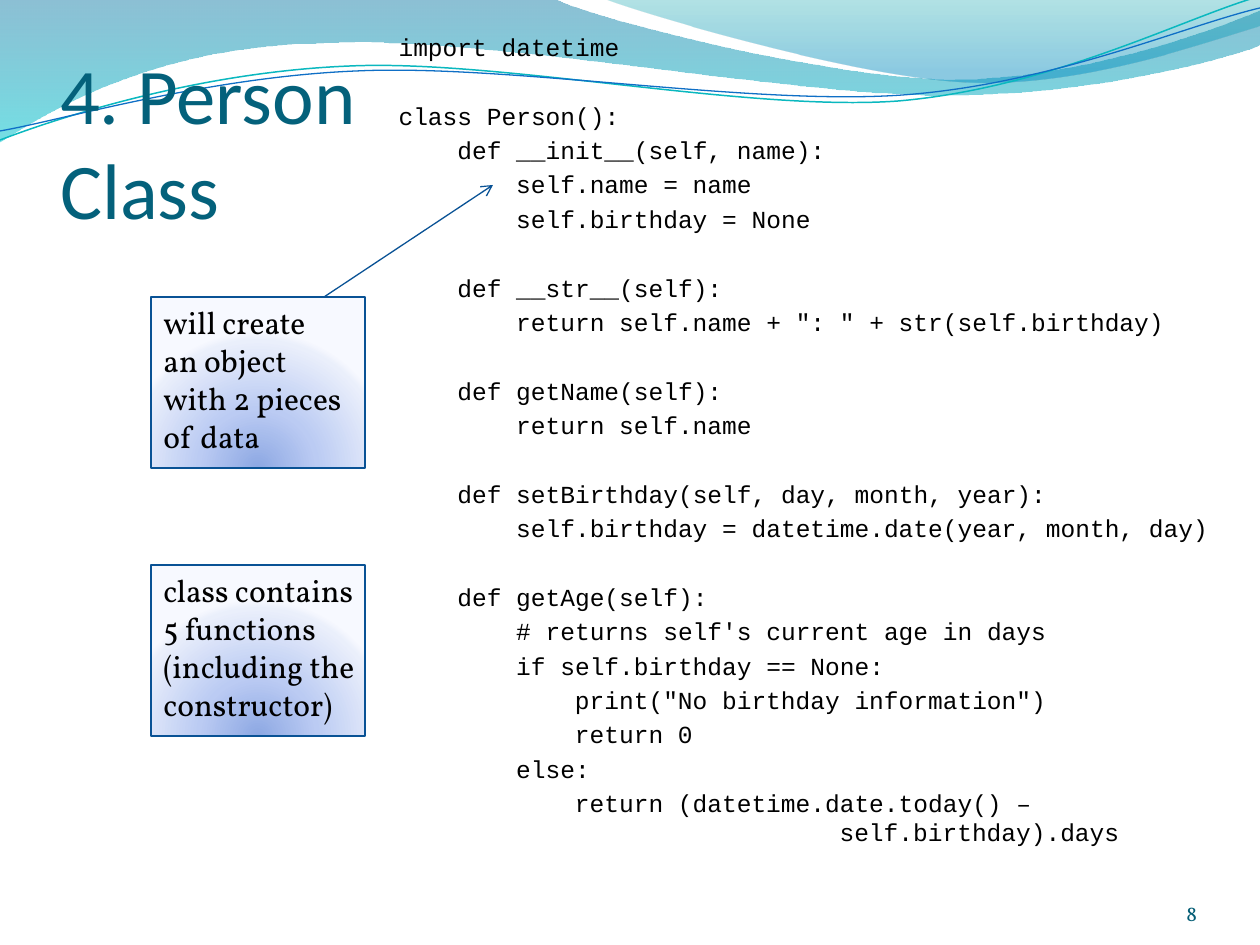
from lxml import etree
from pptx import Presentation
from pptx.dml.color import RGBColor
from pptx.enum.shapes import MSO_CONNECTOR, MSO_SHAPE
from pptx.enum.text import MSO_ANCHOR, MSO_AUTO_SIZE, PP_ALIGN
from pptx.oxml import parse_xml
from pptx.oxml.ns import nsdecls, qn
from pptx.util import Pt

RECTANGLE, STRAIGHT = MSO_SHAPE.RECTANGLE, MSO_CONNECTOR.STRAIGHT
BOTTOM, TOP = MSO_ANCHOR.BOTTOM, MSO_ANCHOR.TOP
LEFT, RIGHT = PP_ALIGN.LEFT, PP_ALIGN.RIGHT
NO_AUTOFIT = MSO_AUTO_SIZE.NONE

EMU_PER_PX = 914400 / 126
SLIDE_WIDTH, SLIDE_HEIGHT = 1260, 945

BLACK = RGBColor(0x00, 0x00, 0x00)
TITLE_TEAL = RGBColor(0x04, 0x61, 0x7B)
NUMBER_TEAL = RGBColor(0x04, 0x5D, 0x75)
OUTLINE_BLUE = RGBColor(0x09, 0x52, 0x95)
WAVE_TEAL = RGBColor(0x0A, 0xB8, 0xBF)
WAVE_BLUE = RGBColor(0x0F, 0x6F, 0xC6)

# Gradient stops: position %, colour, opacity %
BAND_STOPS = [(0, RGBColor(0x00, 0x74, 0xA1), 45), (100, RGBColor(0x00, 0xC6, 0xCF), 55)]
CORNER_STOPS = [(0, RGBColor(0x00, 0xA1, 0xA9), 30), (80, RGBColor(0x00, 0x8B, 0xBF), 45)]
CALLOUT_STOPS = [(0, RGBColor(0x8D, 0xA8, 0xE3), 100), (43, RGBColor(0xBB, 0xCB, 0xF3), 100),
                 (93, RGBColor(0xEA, 0xEF, 0xFB), 100), (100, RGBColor(0xF7, 0xF9, 0xFF), 100)]
DOWNWARD = '<a:lin ang="5400000" scaled="0"/>'
FROM_BELOW = ('<a:path path="circle"><a:fillToRect l="50000" t="130000" '
              'r="50000" b="-30000"/></a:path>')

# Outlines: one point is a straight segment, three points are a Bezier curve
BAND = [[(0, 0)], [(554, -1)], [(600, 21), (837, 79), (955, 79)],
        [(1075, 79), (1207, 33), (1260, 11)], [(1261, 45)],
        [(1239, 55), (1096, 96), (940, 95)], [(784, 95), (481, 35), (324, 43)],
        [(163, 45), (58, 105), (-1, 142)]]
CORNER = [[(604, -1)], [(641, 14), (859, 78), (969, 82)],
          [(1084, 87), (1211, 40), (1260, 26)], [(1260, 0)]]
TEAL_WAVE = [[(0, 140)], [(60, 117), (199, 72), (349, 66)],
             [(498, 59), (747, 112), (898, 101)], [(1050, 88), (1182, 19), (1257, -3)]]
BLUE_WAVE = [[(0, 131)], [(59, 121), (207, 77), (357, 71)],
             [(508, 64), (752, 106), (903, 95)], [(1053, 84), (1184, 26), (1260, 8)]]

CODE_CHARACTER = Pt(8.4)
CONTINUATION_INDENT = 30
NEXT, GAP = Pt(3), Pt(22.7)
# Code lines: spacing above, indent in characters, text
CODE = [
    (NEXT, 0, "import datetime"),
    (GAP, 0, "class Person():"),
    (NEXT, 4, "def __init__(self, name):"),
    (NEXT, 8, "self.name = name"),
    (NEXT, 8, "self.birthday = None"),
    (GAP, 4, "def __str__(self):"),
    (NEXT, 8, 'return self.name + ": " + str(self.birthday)'),
    (GAP, 4, "def getName(self):"),
    (NEXT, 8, "return self.name"),
    (GAP, 4, "def setBirthday(self, day, month, year):"),
    (NEXT, 8, "self.birthday = datetime.date(year, month, day)"),
    (GAP, 4, "def getAge(self):"),
    (NEXT, 8, "# returns self's current age in days"),
    (NEXT, 8, "if self.birthday == None:"),
    (NEXT, 12, 'print("No birthday information")'),
    (NEXT, 12, "return 0"),
    (NEXT, 8, "else:"),
    (NEXT, 12, "return (datetime.date.today() – \vself.birthday).days"),
]


def px(length):
    return round(length * EMU_PER_PX)


def set_values(target, values):
    for name, value in values.items():
        setattr(target, name, value)


def place(shape, box):
    set_values(shape, dict(zip(("left", "top", "width", "height"), map(px, box))))


def write(paragraph, text, font, size, color, **paragraph_format):
    paragraph.text = text
    set_values(paragraph, paragraph_format)
    set_values(paragraph.font, {"name": font, "size": Pt(size)})
    paragraph.font.color.rgb = color


def set_gradient(shape, stops, direction):
    shape.fill.background()
    stop_xml = "".join(
        f'<a:gs pos="{position * 1000}"><a:srgbClr val="{color}">'
        f'<a:alpha val="{opacity * 1000}"/></a:srgbClr></a:gs>'
        for position, color, opacity in stops)
    gradient = parse_xml(f'<a:gradFill {nsdecls("a")} rotWithShape="1">'
                         f'<a:gsLst>{stop_xml}</a:gsLst>{direction}</a:gradFill>')
    properties = shape._element.spPr
    properties.replace(properties.find(qn("a:noFill")), gradient)


def set_line(shape, color, width):
    shape.line.color.rgb = color
    shape.line.width = Pt(width)


def add_outline(slide, outline, close):
    """Add a freeform, joining the three points of each curve into one Bezier."""
    start, *points = [point for segment in outline for point in segment]
    builder = slide.shapes.build_freeform(*start, scale=EMU_PER_PX)
    builder.add_line_segments(points, close=close)
    shape = builder.convert_to_shape()
    shape.shadow.inherit = False
    pieces = shape._element.spPr.iter(qn("a:lnTo"))
    pieces = iter(list(pieces))
    for segment in outline[1:]:
        first, *others = [next(pieces) for _ in segment]
        if others:
            first.tag = qn("a:cubicBezTo")
            for piece in others:
                first.append(piece[0])
                piece.getparent().remove(piece)
    return shape


def add_waves(slide):
    for outline, stops in ((BAND, BAND_STOPS), (CORNER, CORNER_STOPS)):
        shape = add_outline(slide, outline, True)
        set_gradient(shape, stops, DOWNWARD)
        shape.line.fill.background()
    for outline, color, width in ((TEAL_WAVE, WAVE_TEAL, 0.85), (BLUE_WAVE, WAVE_BLUE, 0.75)):
        shape = add_outline(slide, outline, False)
        shape.fill.background()
        set_line(shape, color, width)


def bring_to_front(slide, shape):
    slide.shapes._spTree.append(shape._element)


def add_title(slide, box):
    title = slide.shapes.title
    bring_to_front(slide, title)
    place(title, box)
    set_values(title.text_frame, {
        "margin_left": 0, "margin_right": 0, "margin_bottom": 0, "word_wrap": True,
        "vertical_anchor": BOTTOM, "auto_size": NO_AUTOFIT})
    write(title.text_frame.paragraphs[0], "4. Person \vClass", "Calibri", 45, TITLE_TEAL,
          alignment=LEFT)


def add_code(slide, box):
    body = slide.placeholders[1]
    bring_to_front(slide, body)
    place(body, box)
    frame = body.text_frame
    set_values(frame, {"word_wrap": True, "vertical_anchor": TOP, "auto_size": NO_AUTOFIT})
    for index, (spacing, indent, text) in enumerate(CODE):
        paragraph = frame.add_paragraph() if index else frame.paragraphs[0]
        write(paragraph, text, "Courier New", 14, BLACK, alignment=LEFT,
              line_spacing=Pt(16.6), space_before=spacing)
        margin = CONTINUATION_INDENT if "\v" in text else indent
        properties = paragraph._p.get_or_add_pPr()
        properties.set("marL", str(margin * CODE_CHARACTER))
        properties.set("indent", str((indent - margin) * CODE_CHARACTER))
        properties.insert_element_before(parse_xml(f'<a:buNone {nsdecls("a")}/>'),
                                         "a:tabLst", "a:defRPr", "a:extLst")


def add_slide_number(slide, box):
    number = slide.shapes.add_textbox(*map(px, box))
    set_values(number.text_frame, {
        "margin_left": 0, "margin_top": 0, "margin_right": 0, "margin_bottom": 0,
        "word_wrap": True, "vertical_anchor": BOTTOM})
    write(number.text_frame.paragraphs[0], "8", "Vollkorn", 12, NUMBER_TEAL, alignment=RIGHT)


def add_callout(slide, box, lines):
    callout = slide.shapes.add_shape(RECTANGLE, *map(px, box))
    set_gradient(callout, CALLOUT_STOPS, FROM_BELOW)
    set_line(callout, OUTLINE_BLUE, 0.75)
    callout.shadow.inherit = False
    frame = callout.text_frame
    set_values(frame, {"word_wrap": False, "vertical_anchor": TOP})
    for index, text in enumerate(lines):
        paragraph = frame.add_paragraph() if index else frame.paragraphs[0]
        write(paragraph, text, "Vollkorn", 18, BLACK, alignment=LEFT)


def add_arrow(slide, start, end):
    arrow = slide.shapes.add_connector(STRAIGHT, *map(px, (*start, *end)))
    set_line(arrow, OUTLINE_BLUE, 0.75)
    etree.SubElement(arrow.line._get_or_add_ln(), qn("a:tailEnd"), type="arrow")
    etree.SubElement(arrow._element.spPr, qn("a:effectLst"))


def main():
    presentation = Presentation()
    presentation.slide_width, presentation.slide_height = px(SLIDE_WIDTH), px(SLIDE_HEIGHT)
    slide = presentation.slides.add_slide(presentation.slide_layouts[1])
    add_waves(slide)
    add_title(slide, (60, 52, 331, 183))
    add_code(slide, (386, 26, 867, 897))
    add_slide_number(slide, (1092, 876, 105, 50))
    add_callout(slide, (151, 297, 214, 171),
                ("will create", "an object", "with 2 pieces", "of data"))
    add_arrow(slide, (324, 297), (493, 185))
    add_callout(slide, (151, 565, 214, 171),
                ("class contains", "5 functions", "(including the", "constructor)"))
    presentation.save("out.pptx")


if __name__ == "__main__":
    main()
